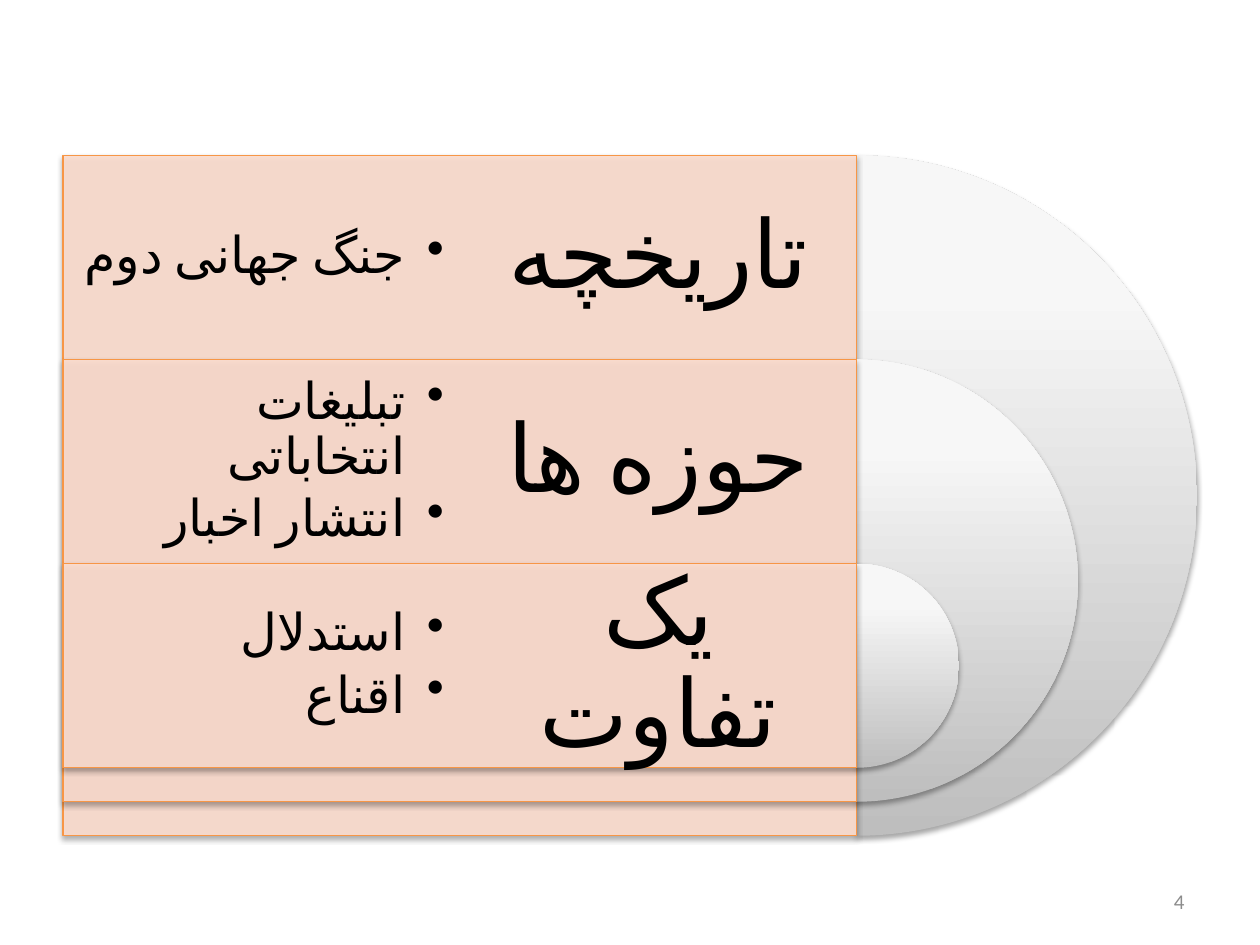
from lxml import etree
from pptx import Presentation
from pptx.dml.color import RGBColor
from pptx.enum.lang import MSO_LANGUAGE_ID
from pptx.enum.shapes import MSO_SHAPE
from pptx.enum.text import MSO_ANCHOR, PP_ALIGN
from pptx.oxml import parse_xml
from pptx.oxml.ns import nsdecls, qn
from pptx.util import Pt

RECTANGLE, PIE = MSO_SHAPE.RECTANGLE, MSO_SHAPE.PIE
MIDDLE = MSO_ANCHOR.MIDDLE
CENTER, RIGHT = PP_ALIGN.CENTER, PP_ALIGN.RIGHT
PERSIAN = MSO_LANGUAGE_ID.FARSI

FONT = "Calibri"
COLORS = {
    "text": "000000",
    "number": "8C8C8C",
    "panel": "FCDDCF",
    "border": "F79646",
    "shadow": "000000",
    "dark": "BEBEBE",
    "light": "F7F7F7",
    "lightest": "F8F8F8",
}

LEFT, TOP = 36, 88.8
PANEL_WIDTH = 453.6
COLUMN_WIDTH = PANEL_WIDTH / 2
ROW_HEIGHT = 116.64
OUTER_SIZE, SIZE_STEP = 388.8, 136.08
BULLET_INDENT = 22.5

ROWS = [
    ("تاریخچه", ["جنگ جهانی دوم"]),
    ("حوزه ها", ["تبلیغات انتخاباتی", "انتشار اخبار"]),
    ("یک تفاوت", ["استدلال", "اقناع"]),
]


def color(name):
    return RGBColor.from_string(COLORS[name])


def add_shadow(shape):
    """Give the shape a soft shadow falling straight down."""
    shape.shadow.inherit = False
    effects = shape._element.spPr.find(qn("a:effectLst"))
    effects.append(parse_xml(
        f'<a:outerShdw {nsdecls("a")} blurRad="{Pt(3.1)}" dist="{Pt(1.8)}" '
        f'dir="5400000" rotWithShape="0"><a:srgbClr val="{COLORS["shadow"]}">'
        '<a:alpha val="35000"/></a:srgbClr></a:outerShdw>'))


def add_half_disc(slide, top, size):
    """Add the right half of a disc centred on the panel's right edge."""
    left = LEFT + PANEL_WIDTH - size / 2
    disc = slide.shapes.add_shape(PIE, Pt(left), Pt(top), Pt(size), Pt(size))
    disc.adjustments[0] = 162
    disc.adjustments[1] = 54
    disc.fill.gradient()
    disc.fill.gradient_angle = 90
    stops = disc._element.spPr.find(qn("a:gradFill")).find(qn("a:gsLst"))
    for stop in list(stops):
        stops.remove(stop)
    for position, name in ((0, "dark"), (80, "light"), (100, "lightest")):
        stop = etree.SubElement(stops, qn("a:gs"), pos=str(position * 1000))
        etree.SubElement(stop, qn("a:srgbClr"), val=COLORS[name])
    disc.line.fill.background()
    add_shadow(disc)


def add_panel(slide, top, height):
    panel = slide.shapes.add_shape(
        RECTANGLE, Pt(LEFT), Pt(top), Pt(PANEL_WIDTH), Pt(height))
    panel.fill.solid()
    panel.fill.fore_color.rgb = color("panel")
    fill_color = panel._element.spPr.find(qn("a:solidFill"))[0]
    etree.SubElement(fill_color, qn("a:alpha"), val="90000")
    panel.line.color.rgb = color("border")
    panel.line.width = Pt(0.75)
    add_shadow(panel)


def add_text_frame(slide, left, top, width, height, inset):
    frame = slide.shapes.add_textbox(
        Pt(left), Pt(top), Pt(width), Pt(height)).text_frame
    frame.word_wrap = True
    frame.vertical_anchor = MIDDLE
    frame.margin_left = frame.margin_right = Pt(inset)
    frame.margin_top = frame.margin_bottom = Pt(inset)
    return frame


def add_run(paragraph, text, size, color_name="text"):
    run = paragraph.add_run()
    run.text = text
    run.font.name = FONT
    run.font.size = Pt(size)
    run.font.color.rgb = color(color_name)
    return run


def add_persian_run(paragraph, text, size):
    """Add a run that also names its language and complex-script font."""
    run = add_run(paragraph, text, size)
    run.font.language_id = PERSIAN
    etree.SubElement(run.font._element, qn("a:cs"), typeface=FONT)


def set_spacing(paragraph, after):
    paragraph.line_spacing = 0.9
    paragraph.space_after = Pt(after)


def add_heading(slide, top, text):
    frame = add_text_frame(
        slide, LEFT + COLUMN_WIDTH, top, COLUMN_WIDTH, ROW_HEIGHT, 16.56)
    paragraph = frame.paragraphs[0]
    paragraph.alignment = CENTER
    set_spacing(paragraph, 18.9)
    add_persian_run(paragraph, text, 54)


def add_bullets(slide, top, items):
    """Add a right-to-left bullet list beside a heading."""
    frame = add_text_frame(slide, LEFT, top, COLUMN_WIDTH, ROW_HEIGHT, 8.64)
    for index, item in enumerate(items):
        paragraph = frame.add_paragraph() if index else frame.paragraphs[0]
        properties = paragraph._p.get_or_add_pPr()
        properties.set("rtl", "1")
        properties.set("marL", str(Pt(BULLET_INDENT)))
        properties.set("indent", str(-Pt(BULLET_INDENT)))
        etree.SubElement(properties, qn("a:buChar"), char="•")
        paragraph.level = 1
        paragraph.alignment = RIGHT
        set_spacing(paragraph, 4.35)
        add_persian_run(paragraph, item, 29)


def add_slide_number(slide, number):
    frame = add_text_frame(slide, 516, 500.5, 168, 28.75, 7.2)
    paragraph = frame.paragraphs[0]
    paragraph.alignment = RIGHT
    add_run(paragraph, number, 12, "number")


def main():
    presentation = Presentation()
    presentation.slide_width, presentation.slide_height = Pt(720), Pt(540)
    slide = presentation.slides.add_slide(presentation.slide_layouts[6])
    add_slide_number(slide, "4")
    for index, (heading, items) in enumerate(ROWS):
        top = TOP + index * ROW_HEIGHT
        size = OUTER_SIZE - index * SIZE_STEP
        add_half_disc(slide, top, size)
        add_panel(slide, top, size)
        add_heading(slide, top, heading)
        add_bullets(slide, top, items)
    presentation.save("out.pptx")


if __name__ == "__main__":
    main()
